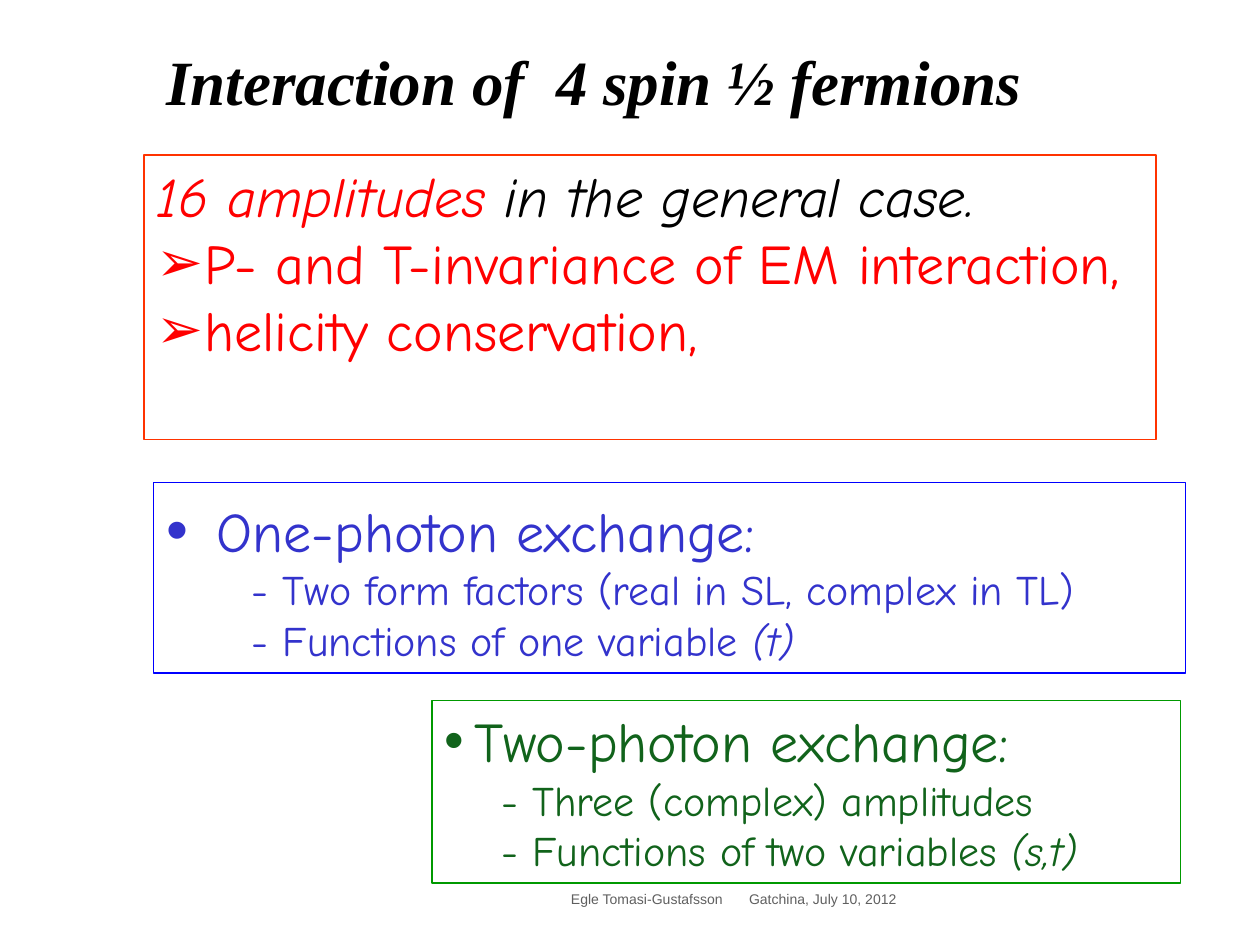
"""Builds the slide on the interaction of four spin ½ fermions."""
from dataclasses import dataclass

from lxml.etree import SubElement
from pptx import Presentation
from pptx.dml.color import RGBColor
from pptx.enum.shapes import MSO_SHAPE
from pptx.enum.text import MSO_ANCHOR, PP_ALIGN
from pptx.oxml.ns import qn
from pptx.util import Cm, Pt


@dataclass(frozen=True)
class Theme:
    heading_font: str = "Times New Roman"
    body_font: str = "Comic Neue"
    footer_font: str = "Arial"
    heading_size: int = 36
    item_size: int = 32
    detail_size: int = 24
    footer_size: int = 8
    black: str = "000000"
    grey: str = "5F5F5F"
    red: str = "FF0000"
    red_frame: str = "FF3300"
    blue: str = "3333CC"
    blue_frame: str = "0000FF"
    green: str = "11631B"
    green_frame: str = "009900"


class SlideWriter:
    def __init__(self, slide, theme):
        self.slide = slide
        self.theme = theme

    def label(self, text, left, top, width, height, font, size, color, wrap=True):
        box = self.slide.shapes.add_textbox(Cm(left), Cm(top), Cm(width), Cm(height))
        box.text_frame.word_wrap = wrap
        paragraph = box.text_frame.paragraphs[0]
        paragraph.text = text
        self.style(paragraph, font, size, color)
        return box.text_frame

    def panel(self, left, top, width, height, frame_color, weight, inset_top=0.13):
        box = self.slide.shapes.add_shape(
            MSO_SHAPE.RECTANGLE, Cm(left), Cm(top), Cm(width), Cm(height))
        box.shadow.inherit = False
        box.fill.background()
        box.line.color.rgb = RGBColor.from_string(frame_color)
        box.line.width = Pt(weight)
        frame = box.text_frame
        frame.word_wrap = True
        frame.vertical_anchor = MSO_ANCHOR.TOP
        frame.margin_top = Cm(inset_top)
        return frame

    def line(self, frame, pieces, size, color, indent=0, bullet=None, bullet_percent=100):
        first = frame.paragraphs[0]
        paragraph = frame.add_paragraph() if first.runs else first
        paragraph.alignment = PP_ALIGN.LEFT
        properties = paragraph._p.get_or_add_pPr()
        properties.set("marL", str(Cm(indent)))
        if bullet:
            properties.set("indent", str(-Cm(indent)))
            SubElement(properties, qn("a:buSzPct"), val=str(bullet_percent * 1000))
            SubElement(properties, qn("a:buFont"), typeface=self.theme.footer_font)
            SubElement(properties, qn("a:buChar"), char=bullet)
        self.style(paragraph, self.theme.body_font, size, color)
        for text, italic in pieces:
            run = paragraph.add_run()
            run.text = text
            if italic:
                run.font.italic = True
        return paragraph

    def exchange(self, frame, heading, details, color, item_indent, detail_indent,
                 bullet_percent=100):
        self.line(frame, [(heading, False)], self.theme.item_size, color,
                  item_indent, "•", bullet_percent)
        for pieces in details:
            self.line(frame, pieces, self.theme.detail_size, color, detail_indent)

    def style(self, paragraph, font, size, color):
        paragraph.font.name = font
        paragraph.font.size = Pt(size)
        paragraph.font.color.rgb = RGBColor.from_string(color)


def main():
    theme = Theme()
    deck = Presentation()
    deck.slide_width, deck.slide_height = Cm(25.4), Cm(19.05)
    writer = SlideWriter(deck.slides.add_slide(deck.slide_layouts[6]), theme)

    footer = writer.label("Egle Tomasi-Gustafsson\tGatchina, July 10, 2012",
                          11.51, 17.73, 12.4, 0.79,
                          theme.footer_font, theme.footer_size, theme.grey)
    footer.margin_left = 0
    footer.vertical_anchor = MSO_ANCHOR.MIDDLE
    footer_properties = footer.paragraphs[0]._p.get_or_add_pPr()
    tab_stops = footer_properties.makeelement(qn("a:tabLst"))
    SubElement(tab_stops, qn("a:tab"), pos=str(Cm(3.59)), algn="l")
    footer_properties.insert(0, tab_stops)

    one_photon = writer.panel(3.1, 9.73, 20.8, 3.84, theme.blue_frame, 0.75, 0.28)
    writer.exchange(one_photon, "One-photon exchange:", [
        [("- Two form factors (real in SL, complex in TL)", False)],
        [("- Functions of one variable ", False), ("(t)", True)],
    ], theme.blue, 1.02, 1.73, 112)

    amplitudes = writer.panel(2.9, 3.12, 20.4, 5.74, theme.red_frame, 1)
    general_case = writer.line(
        amplitudes, [("16 amplitudes", True), (" in the general case.", True)],
        theme.item_size, theme.red)
    general_case.runs[1].font.color.rgb = RGBColor.from_string(theme.black)
    for constraint in ("P- and T-invariance of EM interaction,", "helicity conservation,"):
        writer.line(amplitudes, [(constraint, False)], theme.item_size, theme.red, 0.97, "➢")

    title = writer.label("Interaction of  4 spin ½ fermions", 3.1, 0.74, 18.26, 1.8,
                         theme.heading_font, theme.heading_size, theme.black, wrap=False)
    title.paragraphs[0].font.bold = True
    title.paragraphs[0].font.italic = True

    two_photon = writer.panel(8.71, 14.12, 15.09, 3.68, theme.green_frame, 0.75)
    writer.exchange(two_photon, "Two-photon exchange:", [
        [("- Three (complex) amplitudes", False)],
        [("- Functions of two variables ", False), ("(s,t)", True)],
    ], theme.green, 0.6, 1.15)

    deck.save("out.pptx")


if __name__ == "__main__":
    main()
